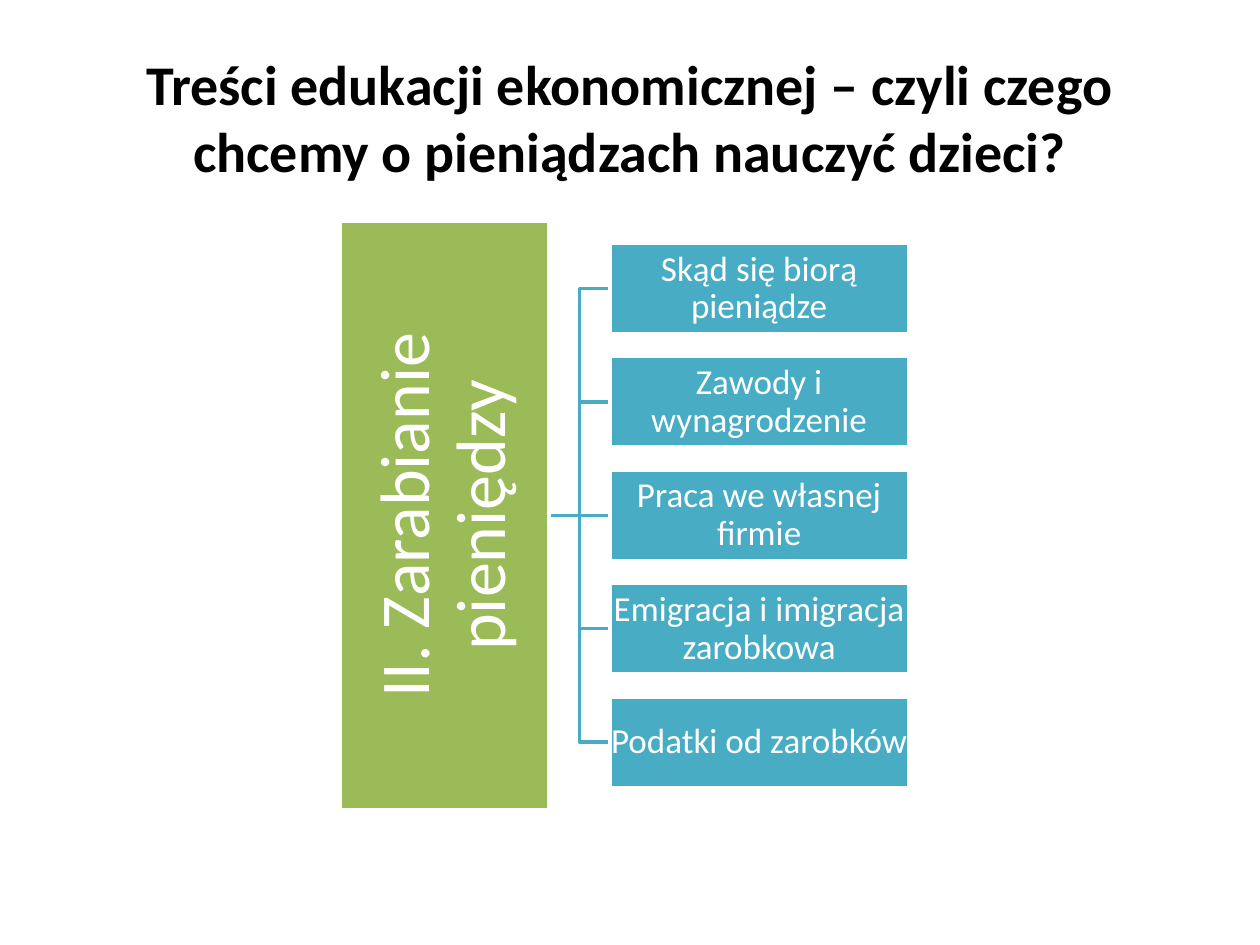
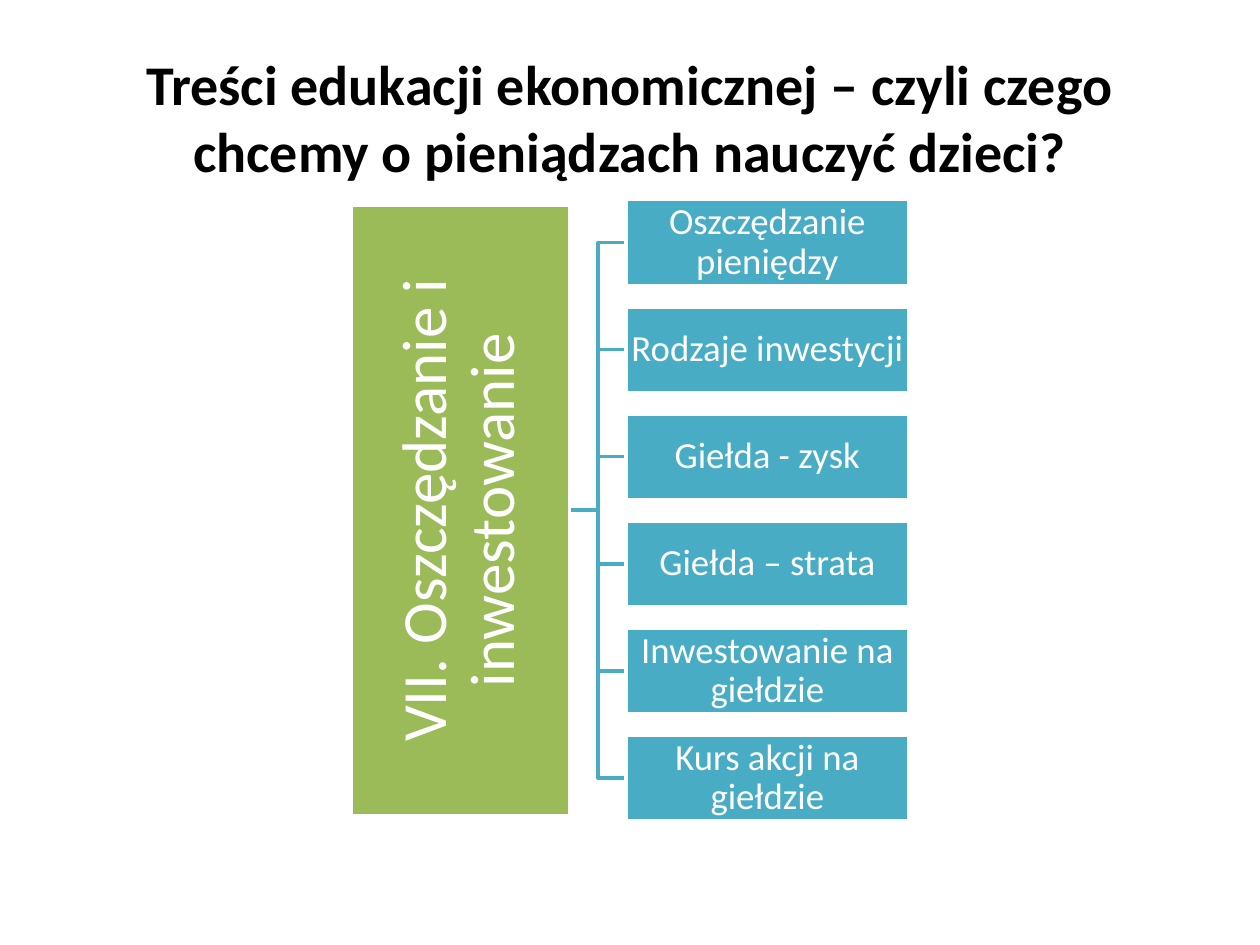
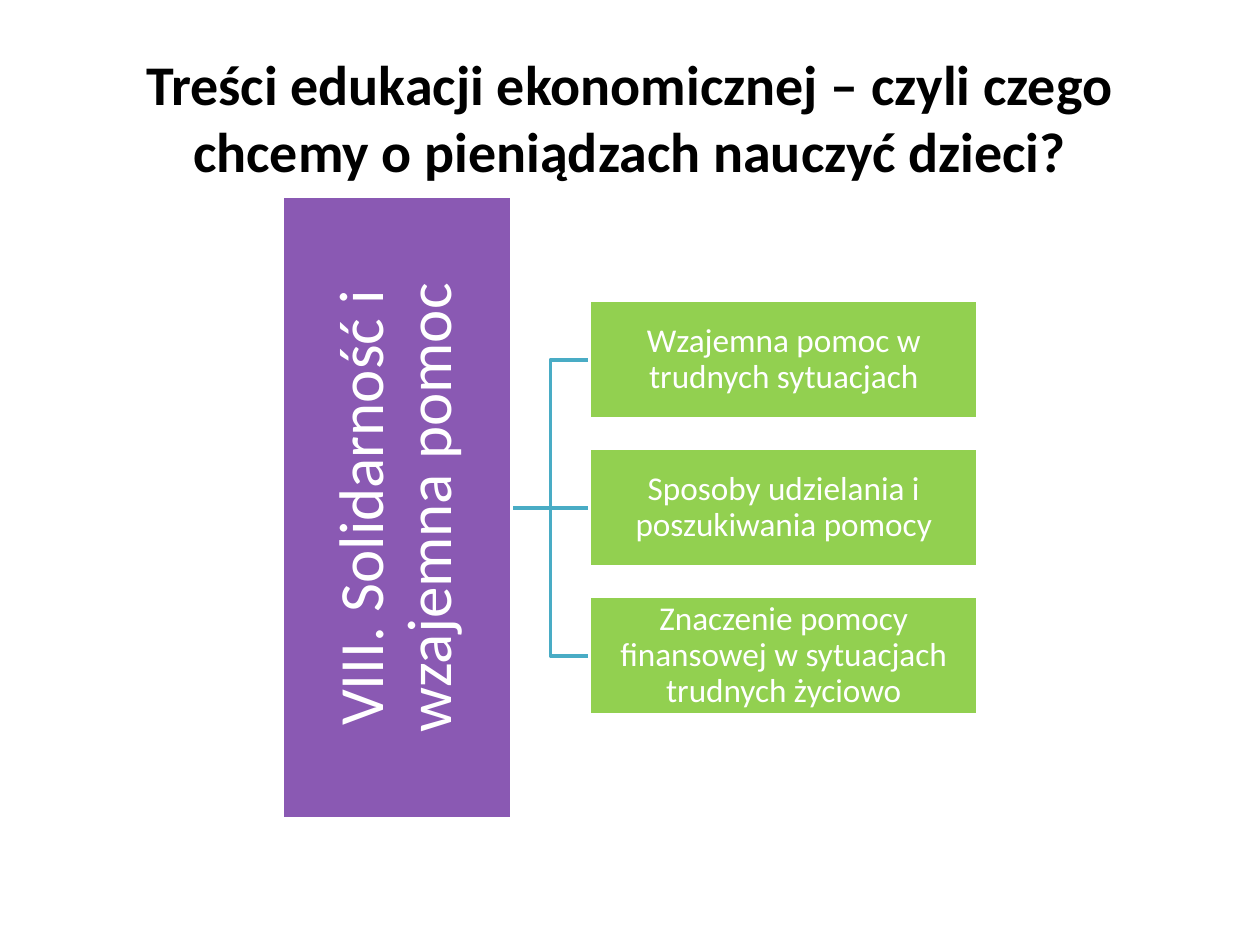
from lxml import etree
from pptx import Presentation
from pptx.dml.color import RGBColor
from pptx.enum.shapes import MSO_CONNECTOR, MSO_SHAPE
from pptx.enum.text import MSO_ANCHOR, PP_ALIGN
from pptx.oxml.ns import qn
from pptx.util import Inches, Pt

RECT = MSO_SHAPE.RECTANGLE
STRAIGHT = MSO_CONNECTOR.STRAIGHT
MIDDLE = MSO_ANCHOR.MIDDLE
CENTER = PP_ALIGN.CENTER
TOP, LEFT, BOTTOM, RIGHT = range(4)

FONT = "Calibri"
COLORS = {
    "black": "000000",
    "white": "FFFFFF",
    "teal": "49ACC5",
    "olive": "9BBB59",
    "purple": "8A59B3",
    "lime": "92D050",
}
TITLE = "Treści edukacji ekonomicznej – czyli czego chcemy o pieniądzach nauczyć dzieci?"
PITCH = 1.25  # distance between topics, in topic heights

# Sizes in inches: root is (left, width, height), topic is (left, width, height)
TREES = [
    dict(
        name="II. Zarabianie pieniędzy",
        topics=[
            "Skąd się biorą pieniądze",
            "Zawody i wynagrodzenie",
            "Praca we własnej firmie",
            "Emigracja i imigracja zarobkowa",
            "Podatki od zarobków",
        ],
        mid=4.09, root=(2.7, 1.66, 4.67), topic=(4.84, 2.37, 0.72),
        fills=("olive", "teal"), sizes=(40, 20), inset=0.03,
    ),
    dict(
        name="VII. Oszczędzanie i inwestowanie",
        topics=[
            "Oszczędzanie pieniędzy",
            "Rodzaje inwestycji",
            "Giełda - zysk",
            "Giełda – strata",
            "Inwestowanie na giełdzie",
            "Kurs akcji na giełdzie",
        ],
        mid=4.05, root=(2.79, 1.73, 4.85), topic=(4.97, 2.24, 0.68),
        fills=("olive", "teal"), sizes=(36, 21), inset=0.02,
    ),
    dict(
        name="VIII. Solidarność i wzajemna pomoc",
        topics=[
            "Wzajemna pomoc w trudnych sytuacjach",
            "Sposoby udzielania i poszukiwania pomocy",
            "Znaczenie pomocy finansowej w sytuacjach trudnych życiowo",
        ],
        mid=4.03, root=(2.24, 1.82, 4.94), topic=(4.68, 3.08, 0.94),
        fills=("purple", "lime"), sizes=(36, 19), inset=0.02,
    ),
]


def paint(name):
    return RGBColor.from_string(COLORS[name])


def write(shape, text, size, color="white", bold=False, inset=(0.01, 0.01), space=None):
    """Fill a shape with one centred paragraph."""
    frame = shape.text_frame
    frame.word_wrap = True
    frame.vertical_anchor = MIDDLE
    frame.margin_left = frame.margin_right = Inches(inset[0])
    frame.margin_top = frame.margin_bottom = Inches(inset[1])
    para = frame.paragraphs[0]
    para.alignment = CENTER
    if space:
        para.line_spacing = space
    run = para.add_run()
    run.text = text
    font = run.font
    font.name, font.size, font.bold = FONT, Pt(size), bold
    font.color.rgb = paint(color)


def stroke(line, color):
    line.color.rgb = paint(color)
    line.width = Pt(2)


def add_title(slide):
    box = slide.shapes.add_textbox(Inches(0.5), Inches(0.3), Inches(9), Inches(1.25))
    write(box, TITLE, 32, color="black", bold=True, inset=(0.1, 0.05))


def add_box(slide, mid_x, mid_y, width, height, text, fill, size, inset=0.01, turn=0):
    """Draw a filled box around its centre."""
    box = slide.shapes.add_shape(
        RECT, Inches(mid_x - width / 2), Inches(mid_y - height / 2),
        Inches(width), Inches(height))
    box.rotation = turn
    box.shadow.inherit = False
    box.fill.solid()
    box.fill.fore_color.rgb = paint(fill)
    stroke(box.line, "white")
    write(box, text, size, inset=(inset, inset), space=0.9)
    return box


def add_elbow(slide, start, end):
    """Draw an open line that bends halfway between two points."""
    bend = (start[0] + end[0]) / 2
    points = [(bend, start[1]), (bend, end[1]), end]
    build = slide.shapes.build_freeform(Inches(start[0]), Inches(start[1]))
    build.add_line_segments([(Inches(x), Inches(y)) for x, y in points], close=False)
    elbow = build.convert_to_shape()
    elbow.shadow.inherit = False
    elbow.fill.background()
    stroke(elbow.line, "teal")


def add_link(slide, start, end):
    link = slide.shapes.add_connector(STRAIGHT, *map(Inches, start + end))
    etree.SubElement(link._element.spPr, qn("a:effectLst"))
    stroke(link.line, "teal")
    return link


def join(link, root, topic, start):
    """Join a link to both boxes; the turned root's bottom faces right."""
    link.begin_connect(root, BOTTOM)
    link.begin_x, link.begin_y = map(Inches, start)
    link.end_connect(topic, LEFT)


def add_tree(slide, name, topics, mid, root, topic, fills, sizes, inset):
    left, width, height = root
    x, wide, high = topic
    count = len(topics)
    rows = [mid + (i - (count - 1) / 2) * PITCH * high for i in range(count)]
    start = (left + width, mid)

    # Lines lie behind the boxes
    links = {}
    for i in reversed(range(count)):
        if 2 * i == count - 1:
            links[i] = add_link(slide, start, (x, mid))
        else:
            add_elbow(slide, start, (x, rows[i]))

    # Root box, turned to read upwards
    trunk = add_box(slide, left + width / 2, mid, height, width, name,
                    fills[0], sizes[0], inset=inset, turn=270)

    # Topic boxes
    for i, text in enumerate(topics):
        box = add_box(slide, x + wide / 2, rows[i], wide, high, text, fills[1], sizes[1])
        if i in links:
            join(links[i], trunk, box, start)


def main():
    deck = Presentation()
    deck.slide_width, deck.slide_height = Inches(10), Inches(7.5)
    for tree in TREES:
        slide = deck.slides.add_slide(deck.slide_layouts[6])
        add_title(slide)
        add_tree(slide, **tree)
    deck.save("out.pptx")


if __name__ == "__main__":
    main()
